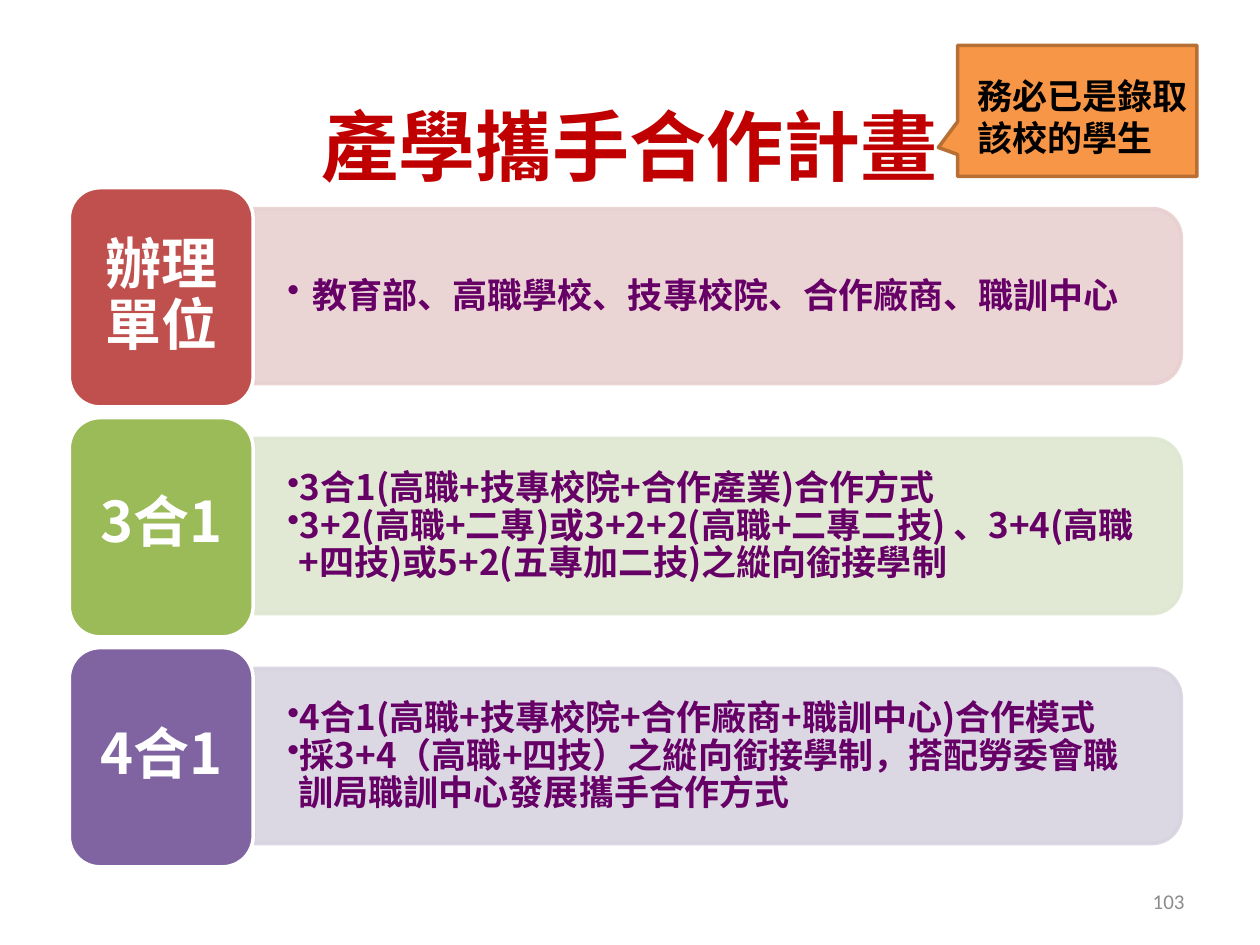
import pptx
import pptx.util
import pptx.dml.color
import pptx.enum.shapes
import pptx.enum.text
import pptx.oxml.ns
from lxml import etree

Inches = pptx.util.Inches
SHAPE = pptx.enum.shapes.MSO_SHAPE
ALIGN = pptx.enum.text.PP_ALIGN
MIDDLE = pptx.enum.text.MSO_ANCHOR.MIDDLE
TOP = pptx.enum.text.MSO_ANCHOR.TOP
CJK = "Noto Sans CJK SC"
HEX = {
    "title": "C00000", "body": "660066", "white": "FFFFFF", "black": "000000",
    "page": "8C8C8C", "note": "F79646", "edge": "B76F34",
}
ROWS = [
    ("辦理單位", "C0504D", "E8D0D0", 0.9,
     [("教育部、高職學校、技專校院、合作廠商、職訓中心", 0.2)]),
    ("3合1", "9BBB59", "DEE7D1", 0.8,
     [("3合1(高職+技專校院+合作產業)合作方式", 0.08),
      ("3+2(高職+二專)或3+2+2(高職+二專二技) 、3+4(高職+四技)或5+2(五專加二技)之縱向銜接學制", 0.09)]),
    ("4合1", "8064A2", "D8D3E0", 0.9,
     [("4合1(高職+技專校院+合作廠商+職訓中心)合作模式", 0.08),
      ("採3+4（高職+四技）之縱向銜接學制，搭配勞委會職訓局職訓中心發展攜手合作方式", 0.09)]),
]
FIRST, PITCH = 1.49, 1.825


def rgb(code):
    """Return a colour from its hex string."""
    return pptx.dml.color.RGBColor.from_string(code)


def child(node, tag, **attrs):
    """Append a drawing element to a node."""
    return etree.SubElement(node, pptx.oxml.ns.qn(tag), **attrs)


def style(run, size, color, name=CJK, bold=True):
    """Format one run of text."""
    form = {"size": pptx.util.Pt(size), "bold": bold, "name": name}
    for key, value in form.items():
        setattr(run.font, key, value)
    run.font.color.rgb = rgb(color)
    if name == CJK:
        child(run._r.get_or_add_rPr(), "a:ea", typeface=name)


def write(para, text, look, align=ALIGN.LEFT, space=1.0):
    """Fill a paragraph with one formatted run."""
    form = {"alignment": align, "line_spacing": space}
    for key, value in form.items():
        setattr(para, key, value)
    run = para.add_run()
    run.text = text
    style(run, *look)


def add_box(slide, place, pad=(0.1, 0.05), anchor=MIDDLE):
    """Add a wrapping text box and return its frame."""
    frame = slide.shapes.add_textbox(*map(Inches, place)).text_frame
    side, edge = map(Inches, pad)
    form = {
        "word_wrap": True, "vertical_anchor": anchor,
        "margin_left": side, "margin_right": side,
        "margin_top": edge, "margin_bottom": edge,
    }
    for key, value in form.items():
        setattr(frame, key, value)
    return frame


def add_shape(slide, kind, place, fill, line):
    """Add a filled and outlined preset shape."""
    shape = slide.shapes.add_shape(kind, *map(Inches, place))
    shape.shadow.inherit = False
    shape.fill.solid()
    shape.fill.fore_color.rgb = rgb(fill)
    shape.line.color.rgb = rgb(line)
    shape.line.width = pptx.util.Pt(2)
    return shape


def add_panel(slide, top, tint):
    """Add the pale panel, rounded on its right side."""
    place = (5, top - 2.82, 1.39, 7.36)
    panel = add_shape(slide, SHAPE.ROUND_2_SAME_RECTANGLE, place, tint, tint)
    panel.rotation = 90
    for color in panel._element.spPr.iter(pptx.oxml.ns.qn("a:srgbClr")):
        child(color, "a:alpha", val="90000")


def add_list(slide, top, items):
    """Add the bulleted lines of a panel."""
    frame = add_box(slide, (2.01, top + 0.24, 7.29, 1.25), (0.27, 0.14))
    for num, (text, indent) in enumerate(items):
        para = frame.add_paragraph() if num else frame.paragraphs[0]
        para.level = 1
        props = para._p.get_or_add_pPr()
        props.set("marL", str(Inches(indent)))
        props.set("indent", str(-Inches(indent)))
        child(props, "a:buChar", char="•")
        write(para, text, (20, HEX["body"]), space=0.9)


def add_row(slide, top, label, fill, tint, space, items):
    """Add a panel with its list and label tile."""
    add_panel(slide, top, tint)
    add_list(slide, top, items)
    tile = (0.55, top, 1.46, 1.74)
    add_shape(slide, SHAPE.ROUNDED_RECTANGLE, tile, fill, HEX["white"])
    frame = add_box(slide, (0.62, top + 0.07, 1.32, 1.59), (0.13, 0.07))
    write(frame.paragraphs[0], label, (32, HEX["white"]), ALIGN.CENTER, space)


def add_title(slide, text):
    """Place and fill the title."""
    title = slide.shapes.title
    form = {"left": 0.5, "top": 0.52, "width": 9, "height": 1.25}
    for key, value in form.items():
        setattr(title, key, Inches(value))
    title.text_frame.vertical_anchor = MIDDLE
    look = (44, HEX["title"], "Calibri")
    write(title.text_frame.paragraphs[0], text, look, ALIGN.CENTER)


def add_note(slide, text):
    """Add the callout that points at the title."""
    place = (7.6, 0.36, 1.9, 1.04)
    note = add_shape(slide, SHAPE.RECTANGULAR_CALLOUT, place, HEX["note"], HEX["edge"])
    note.adjustments[0] = -0.58
    note.adjustments[1] = 0.28
    frame = add_box(slide, (7.66, 0.54, 1.87, 0.77), anchor=TOP)
    write(frame.paragraphs[0], text, (20, HEX["black"]))


def add_page(slide, text):
    """Add the page number."""
    frame = add_box(slide, (7.17, 6.95, 2.33, 0.4))
    look = (12, HEX["page"], "Calibri", False)
    write(frame.paragraphs[0], text, look, ALIGN.RIGHT)


def main():
    """Build and save the slide."""
    deck = pptx.Presentation()
    deck.slide_width, deck.slide_height = Inches(10), Inches(7.5)
    slide = deck.slides.add_slide(deck.slide_layouts[5])
    add_title(slide, "產學攜手合作計畫")
    for num, row in enumerate(ROWS):
        add_row(slide, FIRST + num * PITCH, *row)
    add_page(slide, "103")
    add_note(slide, "務必已是錄取該校的學生")
    deck.save("out.pptx")


if __name__ == "__main__":
    main()
